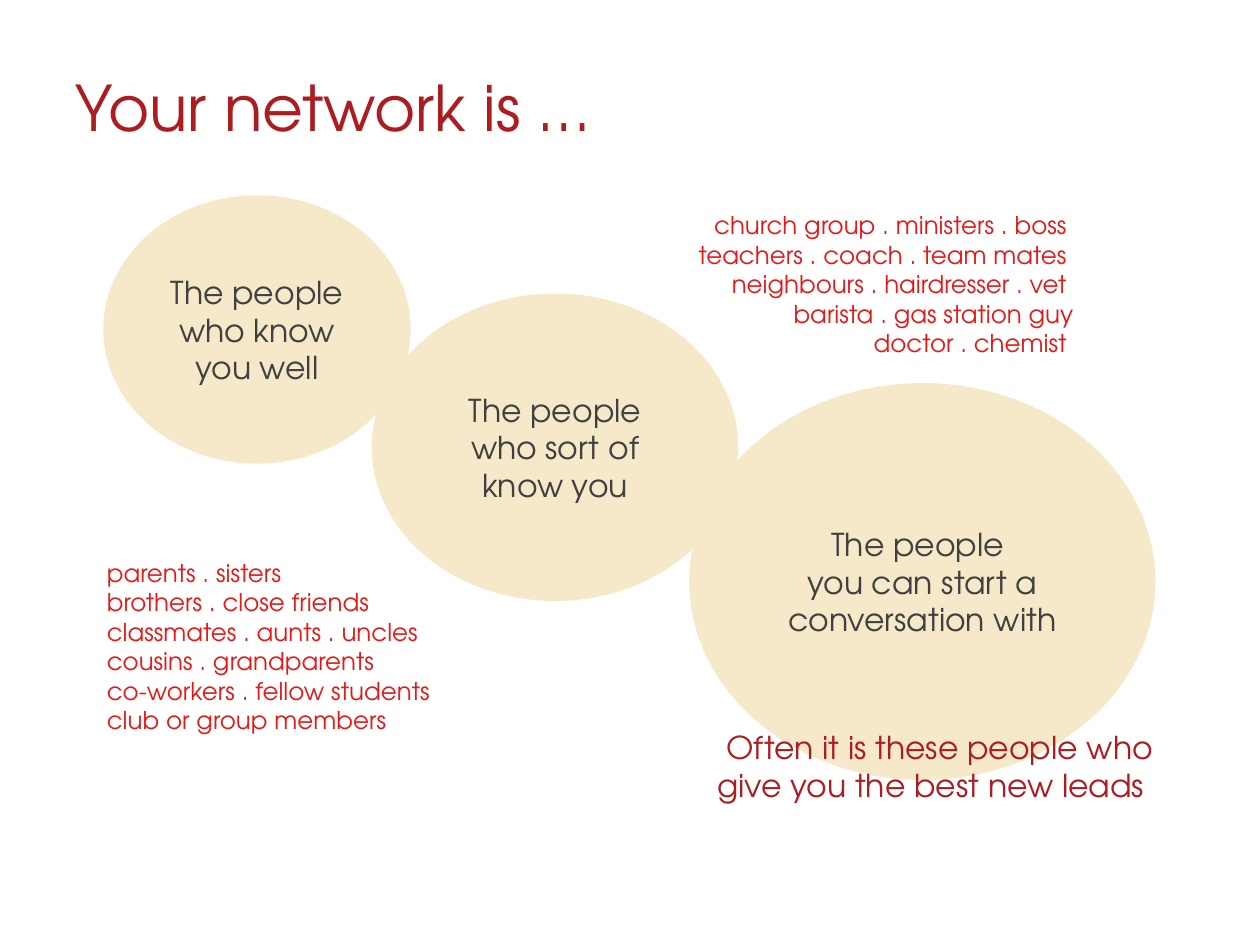
from dataclasses import dataclass

import pptx
import pptx.dml.color
import pptx.enum.shapes
import pptx.enum.text
import pptx.util

Inches = pptx.util.Inches
RGB = pptx.dml.color.RGBColor
Align = pptx.enum.text.PP_ALIGN
Anchor = pptx.enum.text.MSO_ANCHOR


@dataclass(frozen=True)
class Theme:
    font: str = "TeX Gyre Adventor"
    sand: RGB = RGB(0xF5, 0xE9, 0xCA)
    gray: RGB = RGB(0x40, 0x40, 0x40)
    wine: RGB = RGB(0xAC, 0x1D, 0x22)
    red: RGB = RGB(0xE2, 0x1A, 0x1A)
    head: int = 36
    body: int = 18
    small: int = 14


THEME = Theme()


@dataclass(frozen=True)
class Group:
    """A circle of people, in inches."""
    left: float
    top: float
    width: float
    height: float
    text: str


@dataclass(frozen=True)
class Note:
    """Loose text beside the circles, in inches."""
    left: float
    top: float
    width: float
    height: float
    text: str
    size: int
    color: RGB
    align: Align


GROUPS = [
    Group(5.47, 3.04, 3.7, 3.15,
          "The people \nyou can start a conversation with"),
    Group(0.82, 1.55, 2.44, 2.13, "The people who know you well"),
    Group(2.95, 2.33, 2.91, 2.44, "The people who sort of know you"),
]

NOTES = [
    Note(5.31, 5.73, 3.94, 0.7,
         "Often it is these people who give you the best new leads ",
         THEME.body, THEME.wine, Align.RIGHT),
    Note(5.08, 1.62, 3.54, 1.28,
         "church group . ministers . boss  teachers . coach . team mates  "
         "neighbours . hairdresser . vet \nbarista . gas station guy\n"
         "doctor . chemist ",
         THEME.small, THEME.red, Align.RIGHT),
    Note(0.75, 4.38, 3.07, 1.51,
         "parents . sisters \n"
         "brothers . close friends  classmates . aunts . uncles\n"
         "cousins . grandparents\nco-workers . fellow students\n"
         "club or group members",
         THEME.small, THEME.red, Align.LEFT),
]


def place(shape, left: float, top: float, width: float, height: float) -> None:
    shape.left, shape.top = Inches(left), Inches(top)
    shape.width, shape.height = Inches(width), Inches(height)


def write(shape, text: str, size: int, color: RGB, align: Align,
          anchor: Anchor) -> None:
    """Fill one paragraph; each newline is a line break inside it."""
    frame = shape.text_frame
    frame.word_wrap = True
    frame.vertical_anchor = anchor
    para = frame.paragraphs[0]
    para.text = text
    para.alignment = align
    for run in para.runs:
        run.font.name = THEME.font
        run.font.size = pptx.util.Pt(size)
        run.font.color.rgb = color


def draw_group(slide, group: Group) -> None:
    oval = slide.shapes.add_shape(
        pptx.enum.shapes.MSO_SHAPE.OVAL, Inches(group.left),
        Inches(group.top), Inches(group.width), Inches(group.height))
    oval.shadow.inherit = False
    oval.fill.solid()
    oval.fill.fore_color.rgb = THEME.sand
    oval.line.fill.background()
    write(oval, group.text, THEME.body, THEME.gray, Align.CENTER,
          Anchor.MIDDLE)


def draw_note(slide, note: Note) -> None:
    box = slide.shapes.add_textbox(
        Inches(note.left), Inches(note.top),
        Inches(note.width), Inches(note.height))
    write(box, note.text, note.size, note.color, note.align, Anchor.TOP)
    box.text_frame.auto_size = pptx.enum.text.MSO_AUTO_SIZE.SHAPE_TO_FIT_TEXT


def main() -> None:
    deck = pptx.Presentation()
    deck.slide_width, deck.slide_height = Inches(10), Inches(7.5)
    slide = deck.slides.add_slide(deck.slide_layouts[5])

    # Title
    title = slide.shapes.title
    place(title, 0.5, 0.3, 9, 1.09)
    write(title, "Your network is …", THEME.head, THEME.wine, Align.LEFT,
          Anchor.MIDDLE)

    # Circles of people
    for group in GROUPS:
        draw_group(slide, group)

    # Examples and closing remark
    for note in NOTES:
        draw_note(slide, note)

    deck.save("out.pptx")


if __name__ == "__main__":
    main()
